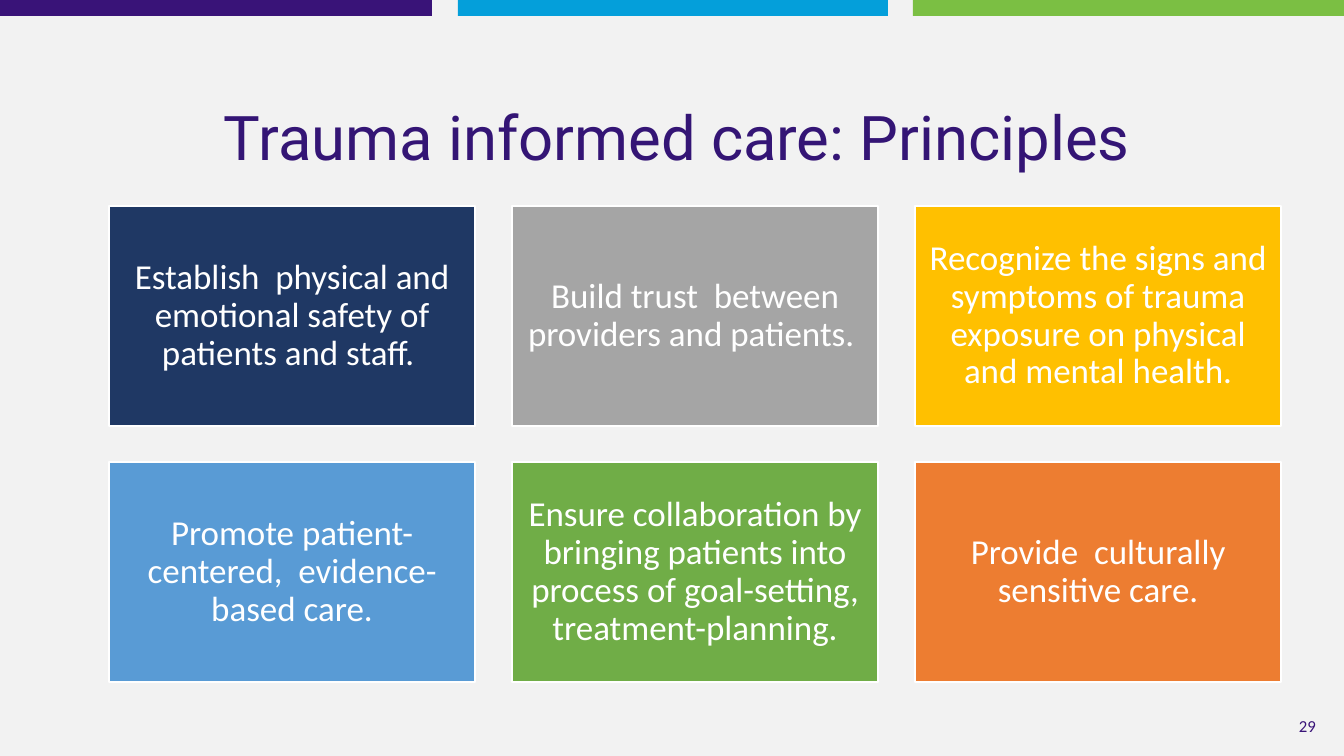
"""Build the slide on the principles of trauma informed care."""
from dataclasses import dataclass

from pptx import Presentation
from pptx.dml.color import RGBColor
from pptx.enum.shapes import MSO_SHAPE
from pptx.enum.text import MSO_ANCHOR, PP_ALIGN
from pptx.shapes.autoshape import Shape
from pptx.slide import Slide
from pptx.util import Emu, Pt

RECTANGLE = MSO_SHAPE.RECTANGLE
MIDDLE = MSO_ANCHOR.MIDDLE
CENTER = PP_ALIGN.CENTER
RIGHT = PP_ALIGN.RIGHT

EMU_PER_PX = 914400 / 100.8
SLIDE_WIDTH, SLIDE_HEIGHT = 1344, 756
BAND_HEIGHT = 16
GRID_LEFT, GRID_TOP = 109, 206
COLUMN_COUNT, COLUMN_STEP, ROW_STEP = 3, 403, 256
TILE_WIDTH, TILE_HEIGHT, TILE_INSET = 366, 220, 10
TEXT_INSET, TITLE_RIGHT_INSET = 5, 39


@dataclass(frozen=True)
class Theme:
    """Colours, fonts and type sizes of the slide."""

    background: str = "F2F2F2"
    purple: str = "391378"
    sky: str = "049FDA"
    lime: str = "7BBF43"
    title: str = "341575"
    white: str = "FFFFFF"
    navy: str = "1F3864"
    grey: str = "A5A5A5"
    gold: str = "FFC000"
    blue: str = "599BD5"
    green: str = "70AD47"
    orange: str = "ED7D31"
    title_font: str = "Roboto"
    body_font: str = "Calibri"
    title_size: int = 44
    tile_size: int = 25
    number_size: int = 12
    line_spacing: float = 0.9


@dataclass(frozen=True)
class Box:
    """Position and size in px."""

    left: int
    top: int
    width: int
    height: int


@dataclass(frozen=True)
class Band:
    """Coloured strip along the top edge."""

    left: int
    width: int
    color: str


@dataclass(frozen=True)
class Principle:
    """One tile of the grid."""

    text: str
    color: str


@dataclass(frozen=True)
class TextStyle:
    """Look of a one-paragraph text."""

    font: str
    size: int
    color: str
    align: PP_ALIGN
    inset: int
    right_inset: int
    line_spacing: float = 1.0
    wrap: bool = True


THEME = Theme()
TITLE_STYLE = TextStyle(THEME.title_font, THEME.title_size, THEME.title, CENTER,
                        TEXT_INSET, TITLE_RIGHT_INSET, THEME.line_spacing)
TILE_STYLE = TextStyle(THEME.body_font, THEME.tile_size, THEME.white, CENTER,
                       TILE_INSET, TILE_INSET, THEME.line_spacing)
NUMBER_STYLE = TextStyle(THEME.body_font, THEME.number_size, THEME.purple, RIGHT,
                         TEXT_INSET, TEXT_INSET, wrap=False)
BANDS = (
    Band(0, 432, THEME.purple),
    Band(458, 430, THEME.sky),
    Band(913, 431, THEME.lime),
)
PRINCIPLES = (
    Principle("Establish  physical and emotional safety of patients and staff. ", THEME.navy),
    Principle("Build trust  between providers and patients. ", THEME.grey),
    Principle("Recognize the signs and symptoms of trauma exposure on physical "
              "and mental health.", THEME.gold),
    Principle("Promote patient-centered,  evidence-based care.", THEME.blue),
    Principle("Ensure collaboration by bringing patients into process of "
              "goal-setting, treatment-planning.", THEME.green),
    Principle("Provide  culturally sensitive care.", THEME.orange),
)


def px(length: int) -> Emu:
    """Turn px into EMU."""
    return Emu(round(length * EMU_PER_PX))


def place(box: Box) -> tuple[Emu, Emu, Emu, Emu]:
    """Give the box as EMU lengths."""
    return px(box.left), px(box.top), px(box.width), px(box.height)


def apply_format(target: object, values: dict[str, object]) -> None:
    """Set every attribute named in the values."""
    for name, value in values.items():
        setattr(target, name, value)


def write_text(shape: Shape, text: str, style: TextStyle) -> None:
    """Fill the shape with one styled paragraph."""
    frame = shape.text_frame
    apply_format(frame, {
        "word_wrap": style.wrap,
        "vertical_anchor": MIDDLE,
        "margin_left": px(style.inset),
        "margin_top": px(style.inset),
        "margin_right": px(style.right_inset),
        "margin_bottom": px(style.inset),
    })
    paragraph = frame.paragraphs[0]
    apply_format(paragraph, {"alignment": style.align, "line_spacing": style.line_spacing})
    run = paragraph.add_run()
    run.text = text
    apply_format(run.font, {"name": style.font, "size": Pt(style.size)})
    run.font.color.rgb = RGBColor.from_string(style.color)


def add_rectangle(slide: Slide, box: Box, color: str) -> Shape:
    """Draw a flat rectangle without an outline."""
    shape = slide.shapes.add_shape(RECTANGLE, *place(box))
    shape.shadow.inherit = False
    shape.fill.solid()
    shape.fill.fore_color.rgb = RGBColor.from_string(color)
    shape.line.fill.background()
    return shape


def add_text(slide: Slide, box: Box, text: str, style: TextStyle) -> None:
    """Draw a text box."""
    write_text(slide.shapes.add_textbox(*place(box)), text, style)


def add_tile(slide: Slide, index: int, principle: Principle) -> None:
    """Draw a principle in its cell of the grid."""
    row, column = divmod(index, COLUMN_COUNT)
    box = Box(GRID_LEFT + column * COLUMN_STEP, GRID_TOP + row * ROW_STEP,
              TILE_WIDTH, TILE_HEIGHT)
    tile = add_rectangle(slide, box, principle.color)
    tile.line.color.rgb = RGBColor.from_string(THEME.white)
    tile.line.width = Pt(1)
    write_text(tile, principle.text, TILE_STYLE)


def main() -> None:
    """Build and save the presentation."""
    presentation = Presentation()
    apply_format(presentation, {"slide_width": px(SLIDE_WIDTH),
                                "slide_height": px(SLIDE_HEIGHT)})
    slide = presentation.slides.add_slide(presentation.slide_layouts[6])
    slide.background.fill.solid()
    slide.background.fill.fore_color.rgb = RGBColor.from_string(THEME.background)
    for band in BANDS:
        add_rectangle(slide, Box(band.left, 0, band.width, BAND_HEIGHT), band.color)
    add_text(slide, Box(1293, 712, 28, 27), "29", NUMBER_STYLE)
    add_text(slide, Box(209, 75, 971, 131), "Trauma informed care: Principles", TITLE_STYLE)
    for index, principle in enumerate(PRINCIPLES):
        add_tile(slide, index, principle)
    presentation.save("out.pptx")


if __name__ == "__main__":
    main()
